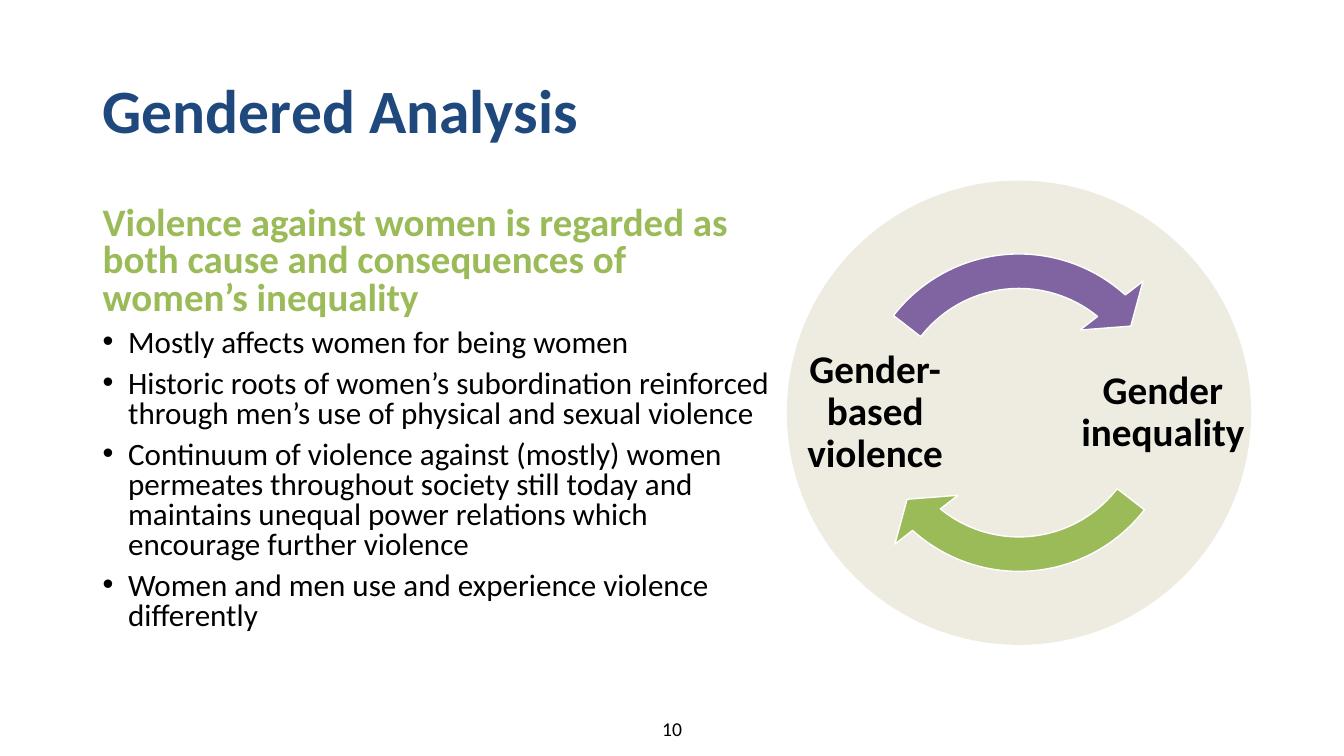
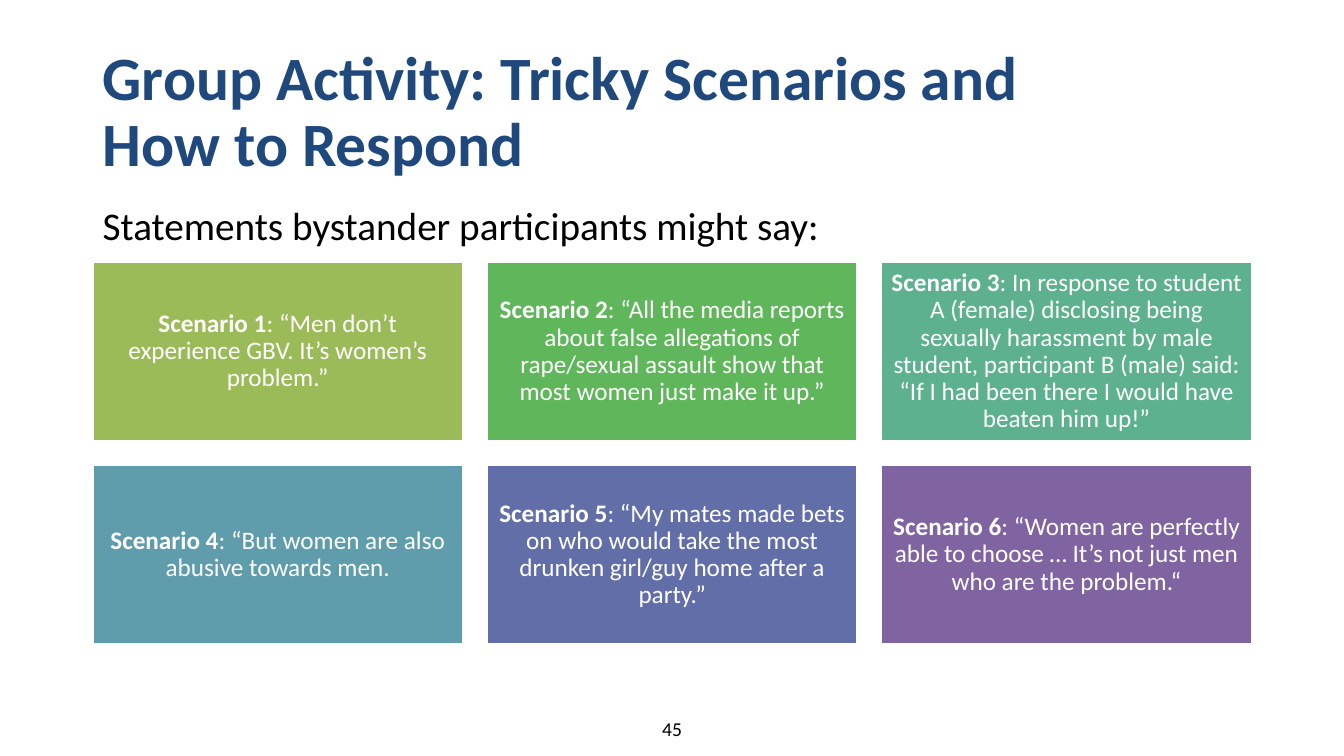
"""Build two slides on gendered analysis and bystander scenarios."""
from dataclasses import dataclass
from typing import NamedTuple

from lxml.etree import SubElement
from pptx import Presentation
from pptx.dml.color import RGBColor as Rgb
from pptx.enum.shapes import MSO_SHAPE as Preset
from pptx.enum.text import MSO_ANCHOR as Anchor
from pptx.enum.text import PP_ALIGN as Align
from pptx.oxml.ns import qn
from pptx.shapes.autoshape import Shape
from pptx.slide import Slide
from pptx.text.text import TextFrame
from pptx.text.text import _Paragraph as Paragraph
from pptx.util import Cm, Pt


@dataclass(frozen=True)
class Theme:
    font: str = "Calibri"
    navy: str = "1F497D"
    green: str = "9BBB59"
    purple: str = "8064A2"
    sand: str = "EEECE1"
    black: str = "000000"
    white: str = "FFFFFF"
    title_size: float = 44
    lead_size: float = 28
    tight_lead_size: float = 27.8
    bullet_size: float = 22.2
    card_size: float = 18
    footer_size: float = 14


class Box(NamedTuple):
    left: float
    top: float
    width: float
    height: float

    def lengths(self) -> tuple[Cm, ...]:
        return tuple(Cm(value) for value in self)


class TextStyle(NamedTuple):
    size: float
    color: str
    bold: bool = False
    align: Align = Align.LEFT
    line_spacing: float = 0.9


class CycleArrow(NamedTuple):
    color: str
    end_angle: float
    start_angle: float


class CycleLabel(NamedTuple):
    text: str
    left: float


class Scenario(NamedTuple):
    color: str
    quote: str


THEME = Theme()
LEFT, CONTENT_WIDTH = 2.34, 29.2
BODY_TOP, BODY_HEIGHT = 5.08, 12.1
TITLE_BOX = Box(LEFT, 1.02, CONTENT_WIDTH, 3.68)
FOOTER_BOX = Box(LEFT, 17.93, CONTENT_WIDTH, 0.89)

TITLE = TextStyle(THEME.title_size, THEME.navy, bold=True)
FOOTER = TextStyle(THEME.footer_size, THEME.black, align=Align.CENTER, line_spacing=1.0)
LEAD = TextStyle(THEME.lead_size, THEME.black)
TIGHT_LEAD = TextStyle(THEME.tight_lead_size, THEME.green, bold=True, line_spacing=0.8)
BULLET = TextStyle(THEME.bullet_size, THEME.black, line_spacing=0.8)
CYCLE_LABEL = TextStyle(THEME.lead_size, THEME.black, bold=True, align=Align.CENTER)
CARD = TextStyle(THEME.card_size, THEME.white, align=Align.CENTER)

BULLETS = (
    "Mostly affects women for being women",
    "Historic roots of women’s subordination reinforced through men’s use of "
    "physical and sexual violence",
    "Continuum of violence against (mostly) women permeates throughout society "
    "still today and maintains unequal power relations which encourage further violence",
    "Women and men use and experience violence differently",
)
BULLET_INDENT, BULLET_GAP = 0.64, 8

CIRCLE = Box(19.83, 4.55, 11.7, 11.7)
ARROW_SIZE, LABEL_SIZE = 9.14, 4.45
ARROW_THICKNESS, ARROW_HEAD_ANGLE, ARROW_HEAD_WIDTH = 0.095, 6.85, 0.11
ARROWS = (
    CycleArrow(THEME.green, 78.51, 22.64),
    CycleArrow(THEME.purple, 186.51, 130.64),
)
LABELS = (
    CycleLabel("Gender inequality", CIRCLE.left + CIRCLE.width - LABEL_SIZE),
    CycleLabel("Gender-based violence", CIRCLE.left),
)

CARD_COLUMNS, CARD_WIDTH, CARD_HEIGHT, CARD_TOP = 3, 9.32, 4.5, 6.61
CARD_GAP = (CONTENT_WIDTH - CARD_COLUMNS * CARD_WIDTH) / (CARD_COLUMNS - 1)
SCENARIOS = (
    Scenario(THEME.green, "“Men don’t experience GBV. It’s women’s problem.”"),
    Scenario("5FB65B", "“All the media reports about false allegations of "
             "rape/sexual assault show that most women just make it up.”"),
    Scenario("5DB18E", "In response to student A (female) disclosing being sexually "
             "harassment by male student, participant B (male) said: "
             "“If I had been there I would have beaten him up!”"),
    Scenario("5F9DAC", "“But women are also abusive towards men."),
    Scenario("626EA7", "“My mates made bets on who would take the most drunken "
             "girl/guy home after a party.”"),
    Scenario(THEME.purple, "“Women are perfectly able to choose … "
             "It’s not just men who are the problem.“"),
)


def style_paragraph(paragraph: Paragraph, style: TextStyle) -> None:
    paragraph.alignment = style.align
    paragraph.line_spacing = style.line_spacing
    font = paragraph.font
    font.name, font.size, font.bold = THEME.font, Pt(style.size), style.bold
    font.color.rgb = Rgb.from_string(style.color)


def set_frame(frame: TextFrame, anchor: Anchor, inset: float | None = None) -> None:
    frame.word_wrap = True
    frame.vertical_anchor = anchor
    if inset is not None:
        frame.margin_left = frame.margin_right = Cm(inset)
        frame.margin_top = frame.margin_bottom = Cm(inset)


def add_text(slide: Slide, box: Box, text: str, style: TextStyle,
             anchor: Anchor = Anchor.TOP, inset: float | None = None) -> TextFrame:
    frame = slide.shapes.add_textbox(*box.lengths()).text_frame
    set_frame(frame, anchor, inset)
    paragraph = frame.paragraphs[0]
    paragraph.text = text
    style_paragraph(paragraph, style)
    return frame


def add_bullet(frame: TextFrame, text: str) -> None:
    paragraph = frame.add_paragraph()
    paragraph.text = text
    paragraph.space_before = Pt(BULLET_GAP)
    properties = paragraph._p.get_or_add_pPr()
    properties.set("marL", str(Cm(BULLET_INDENT)))
    properties.set("indent", str(-Cm(BULLET_INDENT)))
    SubElement(properties, qn("a:buFont"), typeface="Arial")
    SubElement(properties, qn("a:buChar"), char="•")
    style_paragraph(paragraph, BULLET)


def add_filled(slide: Slide, preset: Preset, box: Box, color: str,
               outlined: bool = True) -> Shape:
    shape = slide.shapes.add_shape(preset, *box.lengths())
    shape.shadow.inherit = False
    shape.fill.solid()
    shape.fill.fore_color.rgb = Rgb.from_string(color)
    if outlined:
        shape.line.color.rgb = Rgb.from_string(THEME.white)
        shape.line.width = Pt(1)
    else:
        shape.line.fill.background()
    return shape


def centred_in_circle(size: float) -> Box:
    offset = (CIRCLE.width - size) / 2
    return Box(CIRCLE.left + offset, CIRCLE.top + offset, size, size)


def add_cycle(slide: Slide) -> None:
    add_filled(slide, Preset.OVAL, CIRCLE, THEME.sand, outlined=False)
    for arrow in ARROWS:
        shape = add_filled(slide, Preset.CIRCULAR_ARROW,
                           centred_in_circle(ARROW_SIZE), arrow.color)
        values = (ARROW_THICKNESS, ARROW_HEAD_ANGLE, arrow.end_angle,
                  arrow.start_angle, ARROW_HEAD_WIDTH)
        for index, value in enumerate(values):
            shape.adjustments[index] = value
    for label in LABELS:
        box = centred_in_circle(LABEL_SIZE)._replace(left=label.left)
        add_text(slide, box, label.text, CYCLE_LABEL, Anchor.MIDDLE, inset=0.1)


def add_scenario(slide: Slide, index: int, scenario: Scenario) -> None:
    row, column = divmod(index, CARD_COLUMNS)
    box = Box(LEFT + column * (CARD_WIDTH + CARD_GAP),
              CARD_TOP + row * (CARD_HEIGHT + CARD_GAP), CARD_WIDTH, CARD_HEIGHT)
    frame = add_filled(slide, Preset.RECTANGLE, box, scenario.color).text_frame
    set_frame(frame, Anchor.MIDDLE, inset=0.18)
    paragraph = frame.paragraphs[0]
    style_paragraph(paragraph, CARD)
    name = paragraph.add_run()
    name.text = f"Scenario {index + 1}"
    name.font.bold = True
    paragraph.add_run().text = f": {scenario.quote}"


def add_slide(presentation: Presentation, title: str, number: int) -> Slide:
    slide = presentation.slides.add_slide(presentation.slide_layouts[6])
    add_text(slide, FOOTER_BOX, str(number), FOOTER)
    add_text(slide, TITLE_BOX, title, TITLE, Anchor.MIDDLE)
    return slide


def build_analysis(presentation: Presentation) -> None:
    slide = add_slide(presentation, "Gendered Analysis", 10)
    frame = add_text(slide, Box(LEFT, BODY_TOP, 17.5, BODY_HEIGHT),
                     "Violence against women is regarded as both cause and "
                     "consequences of women’s inequality", TIGHT_LEAD)
    for text in BULLETS:
        add_bullet(frame, text)
    add_cycle(slide)


def build_activity(presentation: Presentation) -> None:
    slide = add_slide(presentation,
                      "Group Activity: Tricky Scenarios and\nHow to Respond", 45)
    add_text(slide, Box(LEFT, BODY_TOP, CONTENT_WIDTH, CARD_TOP - BODY_TOP),
             "Statements bystander participants might say:", LEAD)
    for index, scenario in enumerate(SCENARIOS):
        add_scenario(slide, index, scenario)


def main() -> None:
    presentation = Presentation()
    presentation.slide_width, presentation.slide_height = Cm(33.87), Cm(19.05)
    build_analysis(presentation)
    build_activity(presentation)
    presentation.save("out.pptx")


if __name__ == "__main__":
    main()
